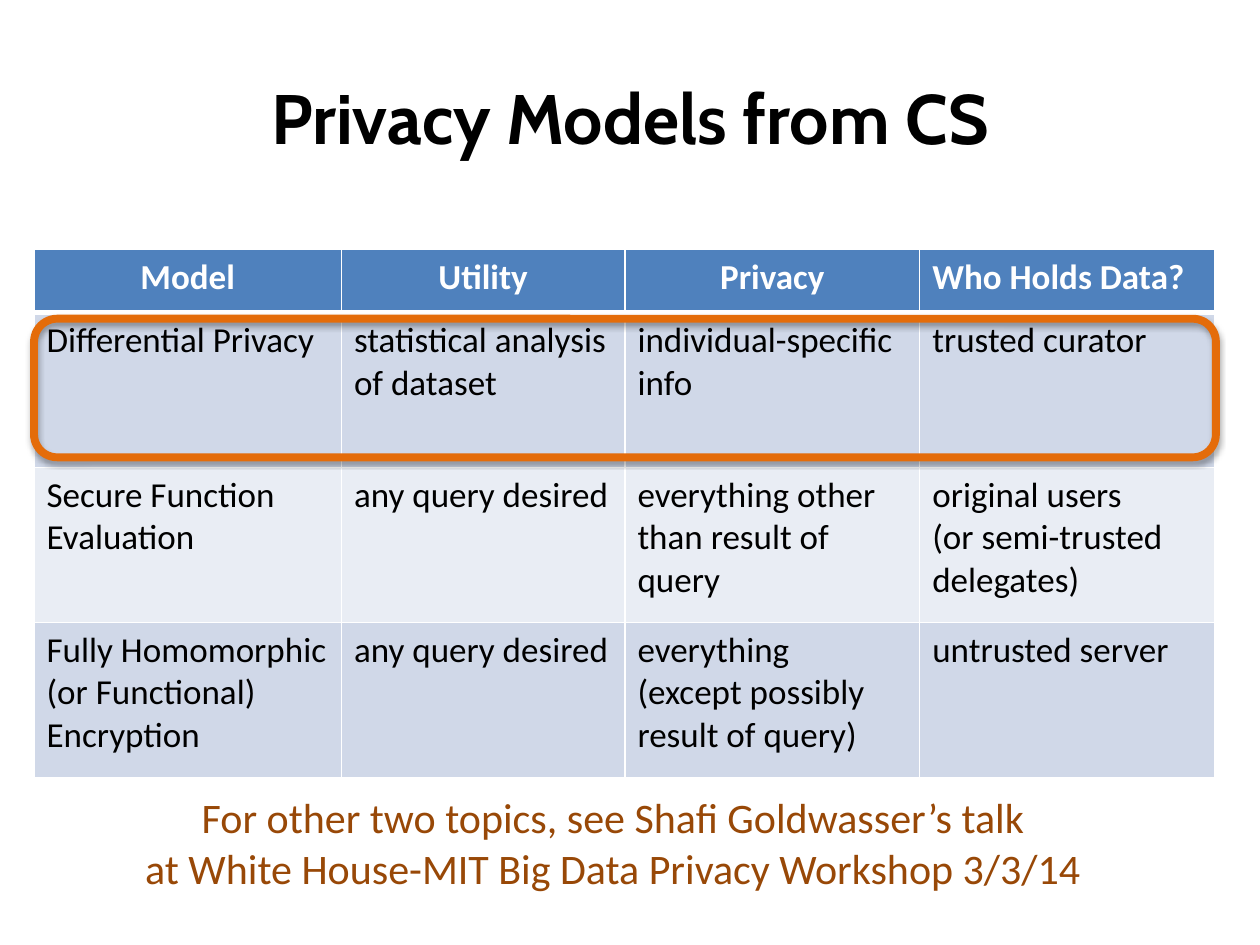
from lxml import etree
from pptx import Presentation
from pptx.dml.color import RGBColor
from pptx.enum import shapes, text
from pptx.oxml import parse_xml
from pptx.oxml.ns import nsdecls
from pptx.util import Inches, Pt

COLORS = {
    "black": "000000", "white": "FFFFFF", "header": "4F81BD",
    "band_dark": "D0D8E8", "band_light": "E9EDF4",
    "highlight": "E46C0A", "note": "984807",
}
COLUMN_WIDTHS = [2.44, 2.25, 2.34, 2.34]
HEADER_HEIGHT, ROW_HEIGHT = 0.5, 1.23
ROWS = [
    ["Model", "Utility", "Privacy", "Who Holds Data?"],
    ["Differential Privacy", "statistical analysis of dataset",
     "individual-specific info", "trusted curator"],
    ["Secure Function Evaluation", "any query desired",
     "everything other than result of query",
     "original users\n(or semi-trusted delegates)"],
    ["Fully Homomorphic (or Functional) Encryption", "any query desired",
     "everything\n(except possibly result of query)", "untrusted server"],
]


def rgb(name):
    return RGBColor.from_string(COLORS[name])


def write(tf, content, size, color, font="Calibri", bold=False, centred=True):
    """Fill the first paragraph, one run per line."""
    p = tf.paragraphs[0]
    p.alignment = text.PP_ALIGN.CENTER if centred else text.PP_ALIGN.LEFT
    for i, line in enumerate(content.split("\n")):
        if i:
            p.add_line_break()
        r = p.add_run()
        r.text = line
        r.font.name, r.font.size, r.font.bold = font, Pt(size), bold
        r.font.color.rgb = rgb(color)


def add_text_box(s, box, content, size, color, wrap=True, **style):
    tf = s.shapes.add_textbox(*map(Inches, box)).text_frame
    tf.word_wrap = wrap
    tf.vertical_anchor = text.MSO_ANCHOR.MIDDLE
    write(tf, content, size, color, **style)


def set_borders(cell, bottom):
    tc_pr = cell._tc.get_or_add_tcPr()
    for side, width in (("L", 1), ("R", 1), ("T", 1), ("B", bottom)):
        tc_pr.append(parse_xml(
            f'<a:ln{side} {nsdecls("a")} w="{Pt(width)}"><a:solidFill>'
            f'<a:srgbClr val="{COLORS["white"]}"/></a:solidFill></a:ln{side}>'))


def add_models_table(s, box):
    table = s.shapes.add_table(len(ROWS), len(COLUMN_WIDTHS), *map(Inches, box)).table
    for column, width in zip(table.columns, COLUMN_WIDTHS):
        column.width = Inches(width)
    for i, row in enumerate(ROWS):
        header = i == 0
        table.rows[i].height = Inches(HEADER_HEIGHT if header else ROW_HEIGHT)
        fill = "header" if header else "band_dark" if i % 2 else "band_light"
        for j, content in enumerate(row):
            cell = table.cell(i, j)
            set_borders(cell, bottom=3 if header else 1)
            cell.fill.solid()
            cell.fill.fore_color.rgb = rgb(fill)
            write(cell.text_frame, content, 20, "white" if header else "black",
                  bold=header, centred=header and j < len(row) - 1)


def add_highlight(s, box):
    sp = s.shapes.add_shape(shapes.MSO_SHAPE.ROUNDED_RECTANGLE, *map(Inches, box))
    sp.fill.background()
    sp.line.color.rgb = rgb("highlight")
    sp.line.width = Pt(4.5)
    sp.shadow.inherit = False
    effects = sp._element.spPr.find("{*}effectLst")
    shadow = etree.fromstring(
        f'<a:outerShdw {nsdecls("a")} blurRad="{Pt(3.1)}" dist="{Pt(1.8)}" '
        f'dir="5400000" rotWithShape="0"><a:srgbClr val="{COLORS["black"]}">'
        '<a:alpha val="35000"/></a:srgbClr></a:outerShdw>')
    effects.append(shadow)


def main():
    prs = Presentation()
    prs.slide_width, prs.slide_height = Inches(10), Inches(7.5)
    s = prs.slides.add_slide(prs.slide_layouts[6])
    add_text_box(s, (0.5, 0.3, 9, 1.25), "Privacy Models from CS", 40, "black",
                 font="Cabin", bold=True)
    add_models_table(s, (0.27, 1.98, 9.38, 4.18))
    add_highlight(s, (0.27, 2.53, 9.38, 1.1))
    add_text_box(s, (0.91, 6.23, 7.91, 0.91),
                 "For other two topics, see Shafi Goldwasser’s talk\n"
                 "at White House-MIT Big Data Privacy Workshop 3/3/14",
                 24, "note", wrap=False)
    prs.save("out.pptx")


if __name__ == "__main__":
    main()
